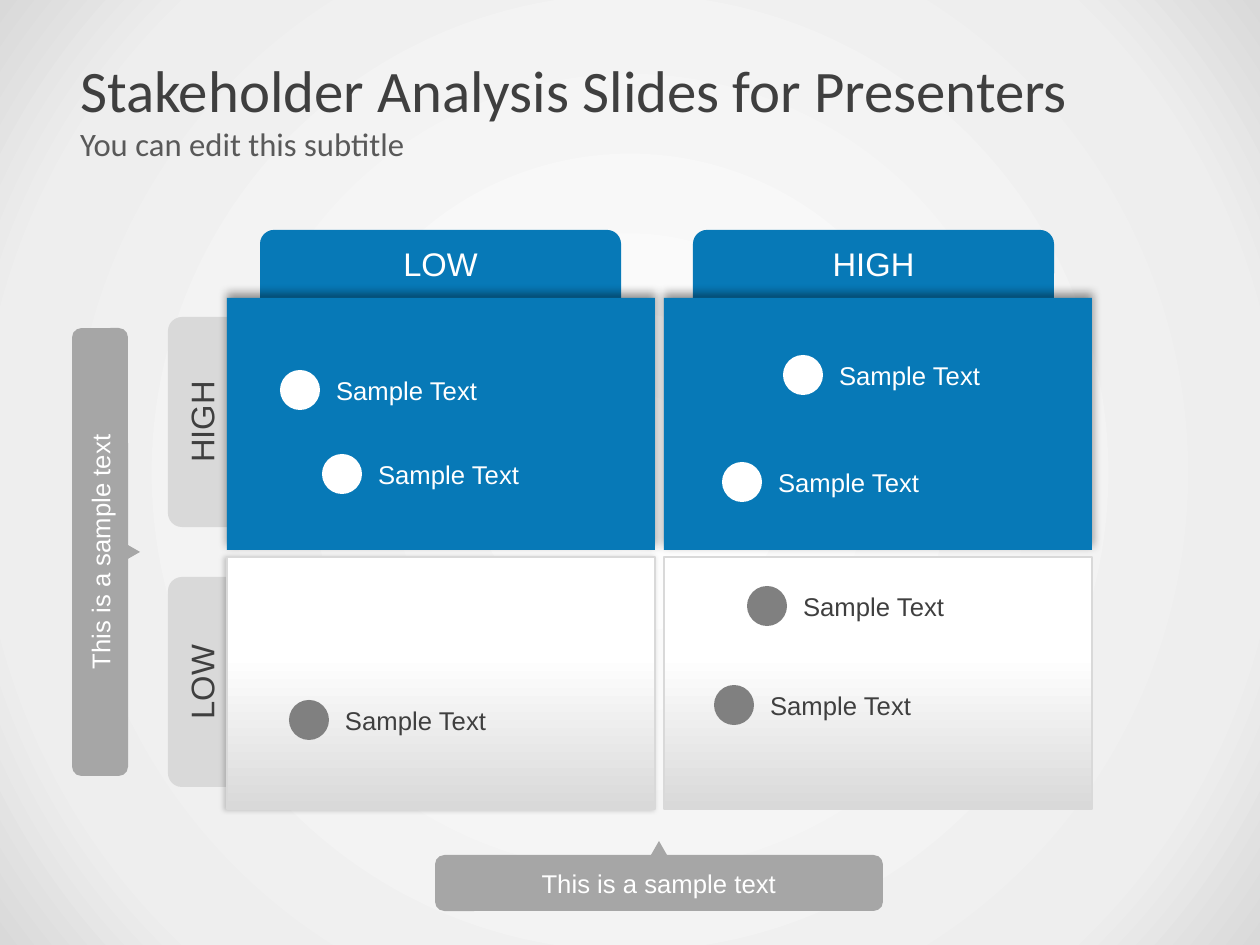
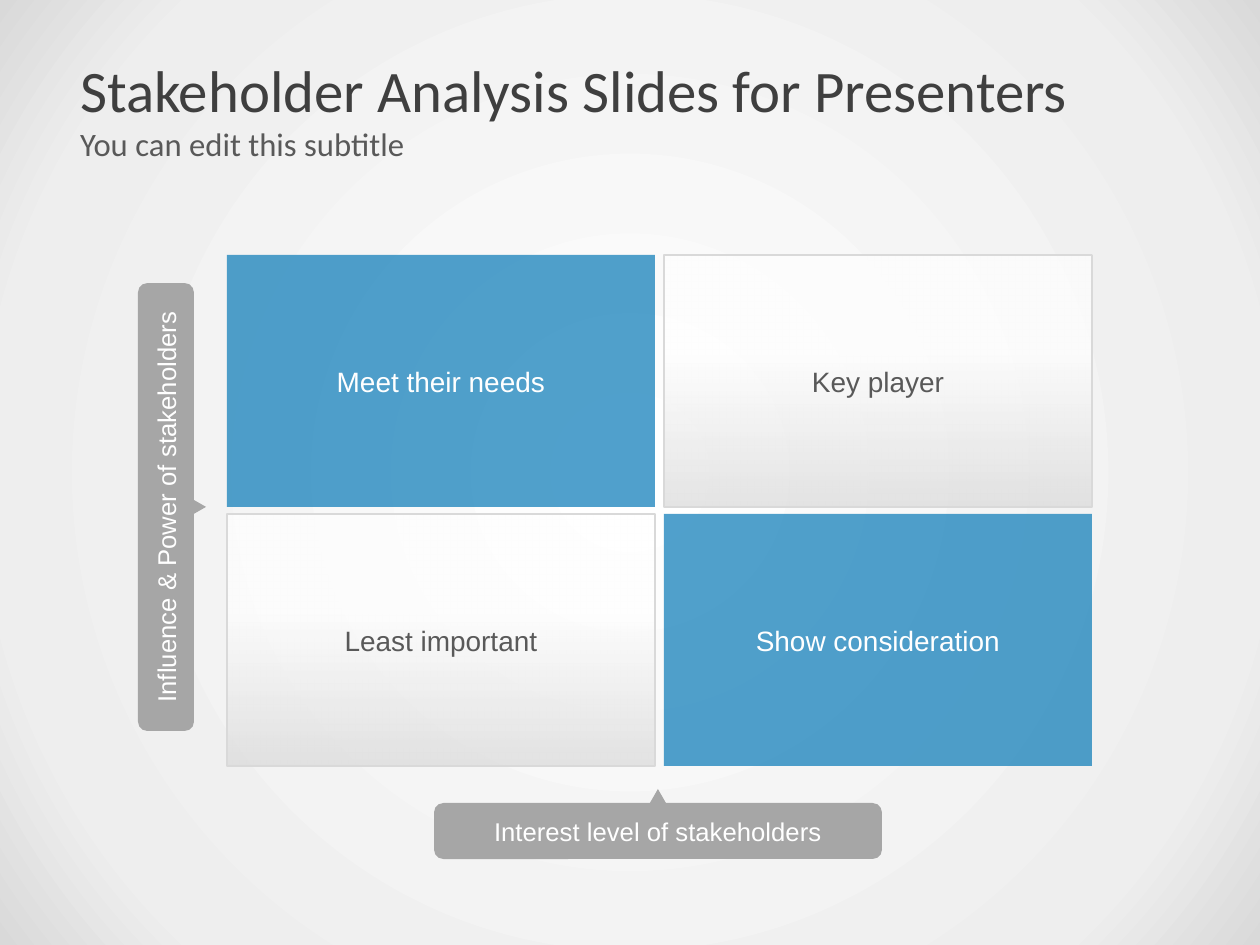
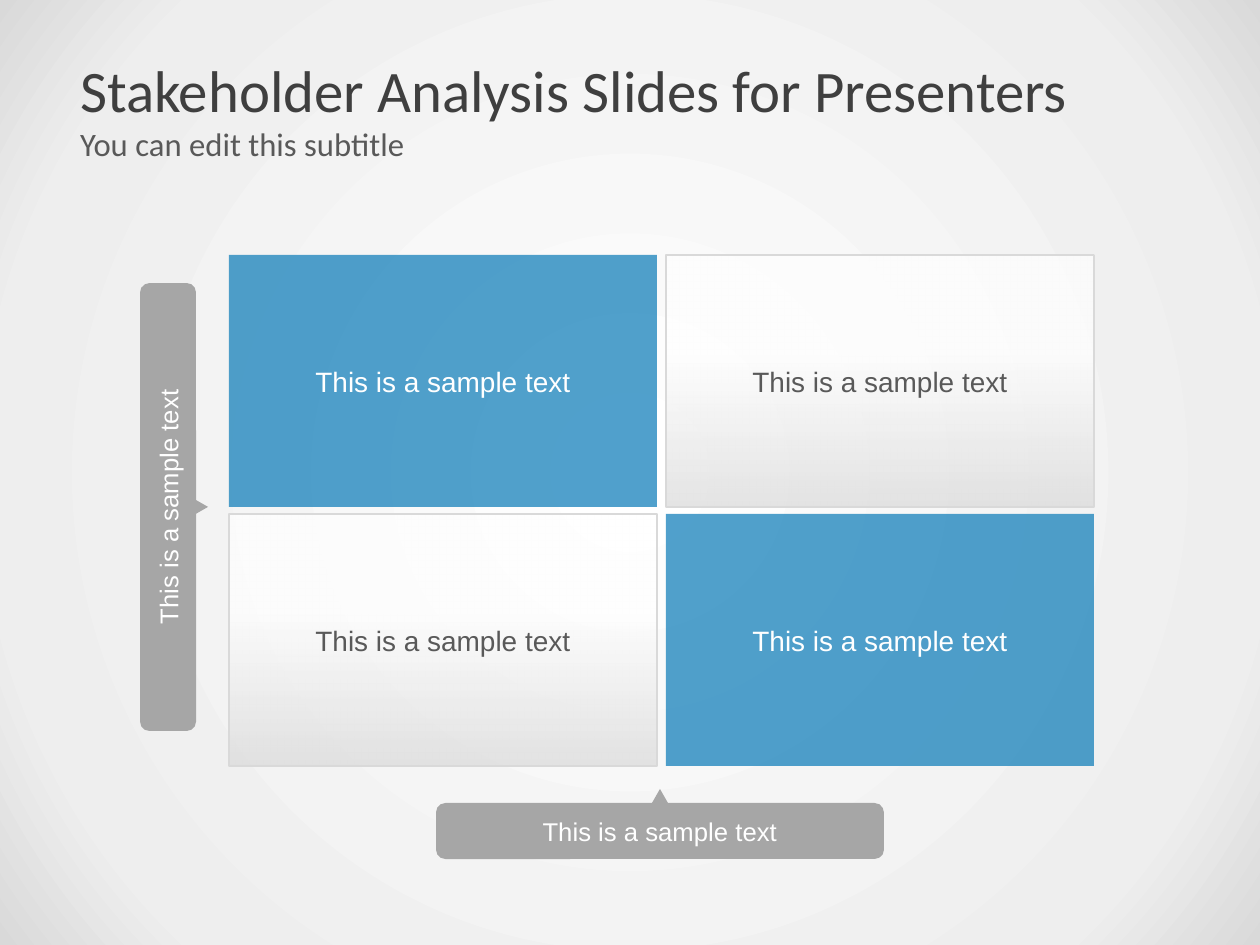
from pptx import Presentation
from pptx.dml.color import RGBColor
from pptx.enum.shapes import MSO_SHAPE
from pptx.enum.text import MSO_ANCHOR, PP_ALIGN
from pptx.oxml import parse_xml
from pptx.oxml.ns import nsdecls, qn
from pptx.util import Pt

RECTANGLE, ROUNDED = MSO_SHAPE.RECTANGLE, MSO_SHAPE.ROUNDED_RECTANGLE
OVAL, TRIANGLE = MSO_SHAPE.OVAL, MSO_SHAPE.ISOSCELES_TRIANGLE
TOP, MIDDLE = MSO_ANCHOR.TOP, MSO_ANCHOR.MIDDLE
LEFT, CENTER = PP_ALIGN.LEFT, PP_ALIGN.CENTER

COLORS = {
    "blue": "0779B7", "white": "FFFFFF", "mist": "EEEEEE", "silver": "D9D9D9",
    "bar": "A6A6A6", "dot": "808080", "ink": "3F3F3F", "slate": "595959",
}
BACKDROP = [(0, "white"), (81, "mist"), (100, "silver")]
FADE = [(0, "silver"), (61, "white")]
RADIAL = '<a:path path="circle"><a:fillToRect l="50000" t="50000" r="50000" b="50000"/></a:path>'
UPWARD = '<a:lin ang="16200000" scaled="0"/>'

EMU_PER_PX = 914400 / 168
SLIDE_SIZE = (1260, 945)
INSETS = (17, 8, 17, 8)
TAB_INSETS = (0, 8, 17, 8)
CELL_SIZE = (428, 252)
CELL_PITCH = (437, 259)
BAR_LENGTH, BAR_DEPTH = 448, 56
POINTER_BASE, POINTER_HEIGHT, POINTER_OVERLAP = 32, 28, 16
DOT_SIZE = 40
LABEL_SHIFT = (39, -3)
LABEL_SIZE = (180, 48)

TITLE = "Stakeholder Analysis Slides for Presenters"
SUBTITLE = "You can edit this subtitle"
SAMPLE = "This is a sample text"
POINT_LABEL = "Sample Text"

TOP_TABS = [("HIGH", 693), ("LOW", 260)]
SIDE_TABS = [("HIGH", 317), ("LOW", 577)]
BLUE_SHADOW = dict(alpha=40, blur=4, distance=2, angle=270)
PALE_SHADOW = dict(alpha=18, blur=2, distance=1, angle=180)
MAP_ORIGIN = (227, 298)
MAP_CELLS = [("blue", BLUE_SHADOW), ("blue", BLUE_SHADOW), (FADE, PALE_SHADOW), (FADE, None)]
POINTS = [
    ("white", "white", [(280, 370), (322, 454), (783, 355), (722, 462)]),
    ("dot", "ink", [(289, 700), (747, 586), (714, 685)]),
]
MAP_BARS = dict(side=(72, 328, SAMPLE), bottom=(435, 855, SAMPLE))

MATRICES = [
    dict(
        origin=(227, 255),
        cells=["Meet their needs", "Key player", "Least important", "Show consideration"],
        bars=dict(side=(138, 283, "Influence & Power of stakeholders"),
                  bottom=(434, 803, "Interest level of stakeholders")),
    ),
    dict(
        origin=(229, 255),
        cells=[SAMPLE] * 4,
        bars=dict(side=(140, 283, SAMPLE), bottom=(436, 803, SAMPLE)),
    ),
]
MATRIX_STYLES = [("blue", "white"), (FADE, "slate"), (FADE, "slate"), ("blue", "white")]


def px(value):
    return round(value * EMU_PER_PX)


def rgb(name):
    return RGBColor.from_string(COLORS[name])


def color_xml(name, alpha=100):
    return f'<a:srgbClr val="{COLORS[name]}"><a:alpha val="{alpha * 1000}"/></a:srgbClr>'


def paint(owner, parent, fill, alpha=100, direction=UPWARD):
    owner.fill.solid()
    if isinstance(fill, str):
        body = f'<a:solidFill {nsdecls("a")}>{color_xml(fill, alpha)}</a:solidFill>'
    else:
        stops = "".join(f'<a:gs pos="{place * 1000}">{color_xml(name, alpha)}</a:gs>'
                        for place, name in fill)
        body = (f'<a:gradFill {nsdecls("a")} rotWithShape="1"><a:gsLst>{stops}</a:gsLst>'
                f'{direction}</a:gradFill>')
    parent.replace(parent.find(qn("a:solidFill")), parse_xml(body))


def cast_shadow(shape, alpha, blur, distance, angle):
    shape.element.spPr.find(qn("a:effectLst")).append(parse_xml(
        f'<a:outerShdw {nsdecls("a")} blurRad="{Pt(blur)}" dist="{Pt(distance)}" '
        f'dir="{angle * 60000}" algn="ctr" rotWithShape="0">'
        f'<a:srgbClr val="000000"><a:alpha val="{alpha * 1000}"/></a:srgbClr></a:outerShdw>'))


def write(shape, text, size=11, color="white", font="Arial", align=CENTER, anchor=MIDDLE,
          insets=INSETS, upward=False):
    frame = shape.text_frame
    frame.word_wrap = True
    frame.vertical_anchor = anchor
    frame.margin_left, frame.margin_top, frame.margin_right, frame.margin_bottom = map(px, insets)
    if upward:
        shape.text_frame._txBody.bodyPr.set("vert", "vert270")
    para = frame.paragraphs[0]
    para.alignment = align
    span = para.add_run()
    span.text = text
    span.font.size = Pt(size)
    span.font.name = font
    span.font.color.rgb = rgb(color)


def add_box(slide, kind, left, top, width, height, fill, alpha=100, rotation=0, shadow=None):
    if rotation:
        left, top = left + (width - height) / 2, top + (height - width) / 2
        width, height = height, width
    box = slide.shapes.add_shape(kind, px(left), px(top), px(width), px(height))
    box.rotation = rotation
    box.shadow.inherit = False
    paint(box, box.element.spPr, fill, alpha)
    if fill is FADE:
        box.line.color.rgb = rgb("silver")
        box.line.width = Pt(1)
    else:
        box.line.fill.background()
    if shadow:
        cast_shadow(box, **shadow)
    return box


def add_text(slide, text, left, top, width, height, **style):
    box = slide.shapes.add_textbox(px(left), px(top), px(width), px(height))
    write(box, text, **style)


def add_cell(slide, origin, index, fill, **style):
    row, column = divmod(index, 2)
    left = origin[0] + column * CELL_PITCH[0]
    top = origin[1] + row * CELL_PITCH[1]
    return add_box(slide, RECTANGLE, left, top, *CELL_SIZE, fill, **style)


def add_bars(slide, side, bottom):
    middle = (BAR_LENGTH - POINTER_BASE) / 2
    left, top, text = side
    write(add_box(slide, ROUNDED, left, top, BAR_DEPTH, BAR_LENGTH, "bar", rotation=270), text)
    add_box(slide, TRIANGLE, left + BAR_DEPTH - POINTER_OVERLAP, top + middle,
            POINTER_HEIGHT, POINTER_BASE, "bar", rotation=90)
    left, top, text = bottom
    write(add_box(slide, ROUNDED, left, top, BAR_LENGTH, BAR_DEPTH, "bar"), text)
    add_box(slide, TRIANGLE, left + middle, top + POINTER_OVERLAP - POINTER_HEIGHT - 2,
            POINTER_BASE, POINTER_HEIGHT, "bar")


def add_slide(deck):
    slide = deck.slides.add_slide(deck.slide_layouts[6])
    add_text(slide, TITLE, 63, 39, 1134, 99, size=25.2, color="ink", font="Calibri", align=LEFT)
    add_text(slide, SUBTITLE, 63, 116, 1134, 71, size=14, color="slate", font="Calibri",
             align=LEFT, anchor=TOP)
    return slide


def add_map(deck):
    slide = add_slide(deck)
    tab_style = dict(size=14, insets=TAB_INSETS, upward=True)
    for text, left in TOP_TABS:
        write(add_box(slide, ROUNDED, left, 230, 361, 84, "blue", rotation=90), text, **tab_style)
    for text, top in SIDE_TABS:
        write(add_box(slide, ROUNDED, 168, top, 84, 210, "silver"), text, color="ink", **tab_style)
    for index, (fill, shadow) in enumerate(MAP_CELLS):
        add_cell(slide, MAP_ORIGIN, index, fill, shadow=shadow)
    for fill, color, places in POINTS:
        for left, top in places:
            add_box(slide, OVAL, left, top, DOT_SIZE, DOT_SIZE, fill)
            add_text(slide, POINT_LABEL, left + LABEL_SHIFT[0], top + LABEL_SHIFT[1], *LABEL_SIZE,
                     color=color, align=LEFT, anchor=TOP)
    add_bars(slide, **MAP_BARS)


def add_matrix(deck, origin, cells, bars):
    slide = add_slide(deck)
    for index, (text, (fill, color)) in enumerate(zip(cells, MATRIX_STYLES)):
        write(add_cell(slide, origin, index, fill, alpha=70), text, size=12, color=color)
    add_bars(slide, **bars)


def main():
    deck = Presentation()
    deck.slide_width, deck.slide_height = map(px, SLIDE_SIZE)
    master = deck.slide_master
    background = master.background
    background.fill.solid()
    paint(background, master.element.find(".//" + qn("p:bgPr")), BACKDROP, direction=RADIAL)
    add_map(deck)
    for matrix in MATRICES:
        add_matrix(deck, **matrix)
    deck.save("out.pptx")


if __name__ == "__main__":
    main()
